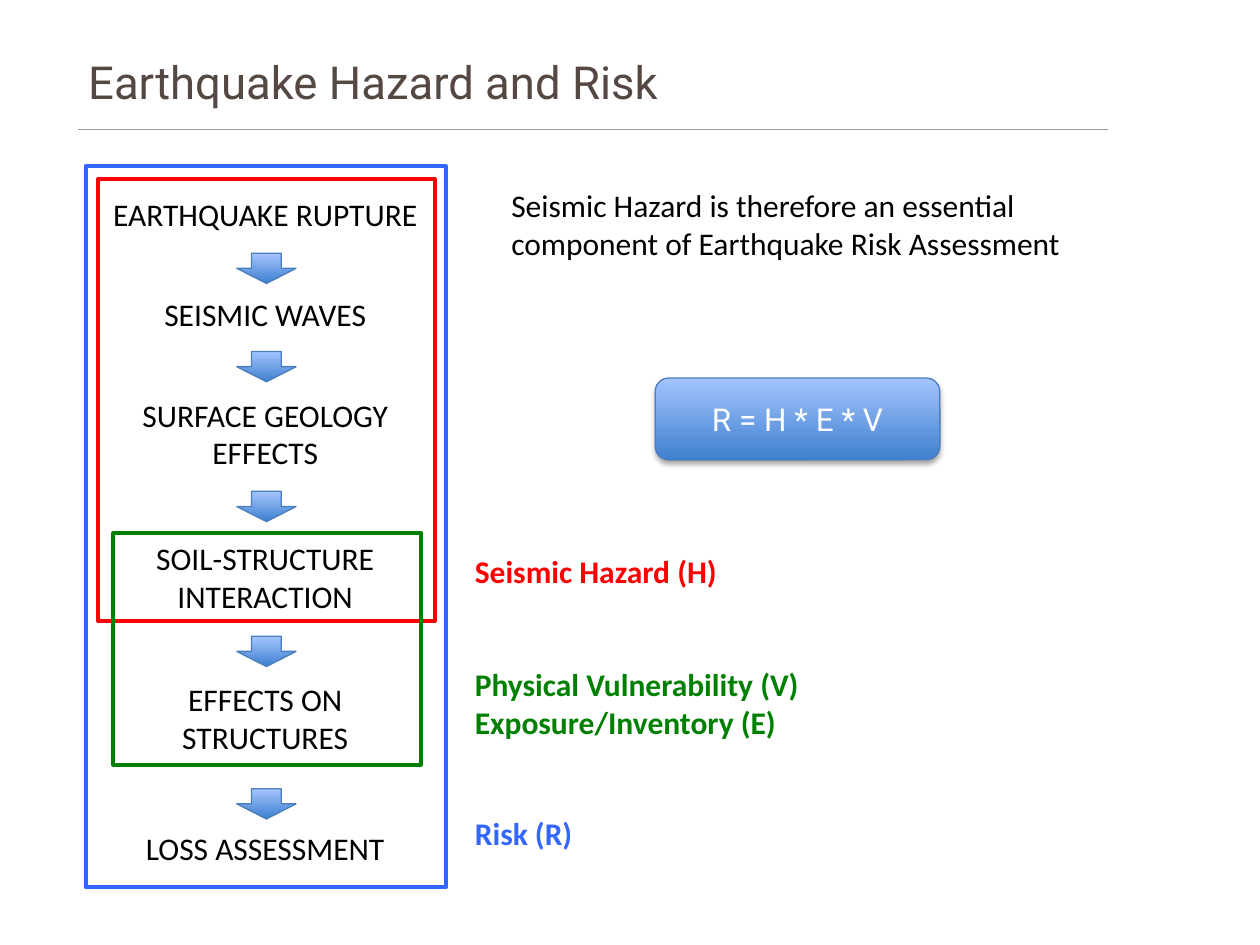
from pptx import Presentation
from pptx.dml.color import RGBColor
from pptx.enum.shapes import MSO_CONNECTOR, MSO_SHAPE as SHAPE
from pptx.enum.text import MSO_ANCHOR as ANCHOR, MSO_AUTO_SIZE as AUTO, PP_ALIGN as ALIGN
from pptx.oxml import parse_xml
from pptx.oxml.ns import nsdecls
from pptx.util import Inches, Pt

COLORS = {
    "title": "554741", "rule": "999999", "text": "000000", "white": "FFFFFF",
    "hazard": "FF0000", "vulnerability": "008000", "risk": "3366FF",
    "dark": "3F80CE", "light": "A4C4FF", "edge": "4B7EBC",
}


def rgb(name):
    return RGBColor.from_string(COLORS[name])


def write(tf, text, size=18, font="Calibri", color="text", bold=False,
          align=ALIGN.LEFT, anchor=ANCHOR.TOP):
    """Fill a text frame, one paragraph for each line of text."""
    tf.vertical_anchor = anchor
    for i, line in enumerate(text.split("\n")):
        p = tf.add_paragraph() if i else tf.paragraphs[0]
        p.alignment = align
        r = p.add_run()
        r.text = line
        r.font.size = Pt(size)
        r.font.name = font
        r.font.bold = bold
        r.font.color.rgb = rgb(color)


class Deck:
    def __init__(self):
        self.prs = Presentation()
        self.prs.slide_width, self.prs.slide_height = Inches(10), Inches(7.5)
        self.s = None

    def add_slide(self, title):
        self.s = self.prs.slides.add_slide(self.prs.slide_layouts[5])
        sp = self.s.shapes.title
        sp.left, sp.top = Inches(0.6), Inches(0.31)
        sp.width, sp.height = Inches(8.19), Inches(0.67)
        write(sp.text_frame, title, size=26, font="Roboto", color="title",
              anchor=ANCHOR.MIDDLE)

    def rule(self, x1, x2, y):
        line = self.s.shapes.add_connector(
            MSO_CONNECTOR.STRAIGHT, Inches(x1), Inches(y), Inches(x2), Inches(y))
        line.line.color.rgb = rgb("rule")
        line.line.width = Pt(0.75)
        line._element.spPr.append(parse_xml(f"<a:effectLst {nsdecls('a')}/>"))

    def text(self, x, y, w, h, text, wrap=True, **style):
        sp = self.s.shapes.add_textbox(Inches(x), Inches(y), Inches(w), Inches(h))
        tf = sp.text_frame
        tf.word_wrap = wrap
        tf.auto_size = AUTO.SHAPE_TO_FIT_TEXT
        write(tf, text, **style)

    def shape(self, kind, x, y, w, h, color, width):
        sp = self.s.shapes.add_shape(kind, Inches(x), Inches(y), Inches(w), Inches(h))
        sp.shadow.inherit = False
        sp.line.color.rgb = rgb(color)
        sp.line.width = Pt(width)
        return sp

    def frame(self, x, y, w, h, color):
        self.shape(SHAPE.RECTANGLE, x, y, w, h, color, 2.25).fill.background()

    def gradient(self, kind, x, y, w, h):
        sp = self.shape(kind, x, y, w, h, "edge", 0.75)
        sp.fill.gradient()
        sp.fill.gradient_angle = 90
        for stop, position, color in zip(sp.fill.gradient_stops, (0, 1), ("dark", "light")):
            stop.position = position
            stop.color.rgb = rgb(color)
        return sp

    def formula(self, x, y, w, h, text):
        sp = self.gradient(SHAPE.ROUNDED_RECTANGLE, x, y, w, h)
        write(sp.text_frame, text, font="Roboto", color="white",
              align=ALIGN.CENTER, anchor=ANCHOR.MIDDLE)
        # Soft shadow just below the box
        sp._element.spPr.find("{*}effectLst").append(parse_xml(
            f'<a:outerShdw {nsdecls("a")} blurRad="{Pt(3.1)}" dist="{Pt(1.8)}" '
            'dir="5400000" rotWithShape="0"><a:srgbClr val="000000">'
            '<a:alpha val="35000"/></a:srgbClr></a:outerShdw>'))


def main():
    deck = Deck()

    # Title and statement
    deck.add_slide("Earthquake Hazard and Risk")
    deck.rule(0.62, 8.79, 1.03)
    deck.text(3.96, 1.43, 4.67, 0.71, "Seismic Hazard is therefore an essential "
              "component of Earthquake Risk Assessment")

    # Chain of steps: top, height, text
    steps = [
        (1.5, 0.4, "EARTHQUAKE RUPTURE"),
        (2.29, 0.4, "SEISMIC WAVES"),
        (3.09, 0.71, "SURFACE GEOLOGY EFFECTS"),
        (4.23, 0.71, "SOIL-STRUCTURE INTERACTION"),
        (5.35, 0.71, "EFFECTS ON STRUCTURES"),
        (6.53, 0.4, "LOSS ASSESSMENT"),
    ]
    for y, h, text in steps:
        deck.text(0.78, y, 2.65, h, text, align=ALIGN.CENTER)
    for y in (2.01, 2.79, 3.9, 5.05, 6.26):
        deck.gradient(SHAPE.DOWN_ARROW, 1.88, y, 0.47, 0.24)

    # Frames around the steps
    deck.frame(0.78, 1.42, 2.67, 3.51, "hazard")
    deck.frame(0.9, 4.23, 2.44, 1.84, "vulnerability")
    deck.frame(0.68, 1.32, 2.86, 5.72, "risk")

    # Frame labels
    deck.text(3.67, 4.33, 2.15, 0.4, "Seismic Hazard (H)", wrap=False,
              color="hazard", bold=True)
    deck.text(3.67, 5.23, 2.95, 0.71, "Physical Vulnerability (V)\nExposure/Inventory (E)",
              color="vulnerability", bold=True)
    deck.text(3.67, 6.41, 0.99, 0.4, "Risk (R)", wrap=False, color="risk", bold=True)

    # Risk formula
    deck.formula(5.2, 3, 2.26, 0.65, "R = H * E * V")

    deck.prs.save("out.pptx")


if __name__ == "__main__":
    main()
